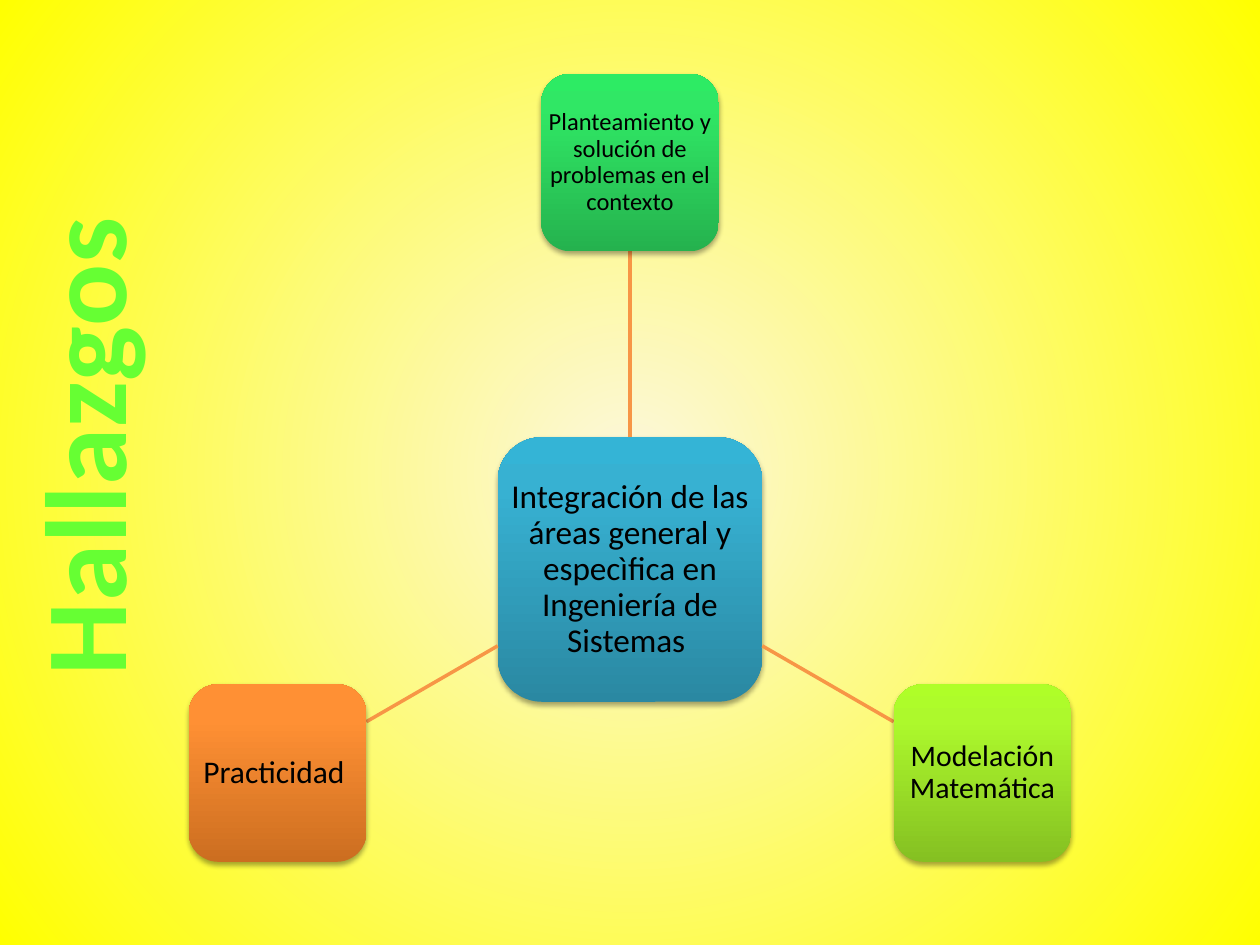
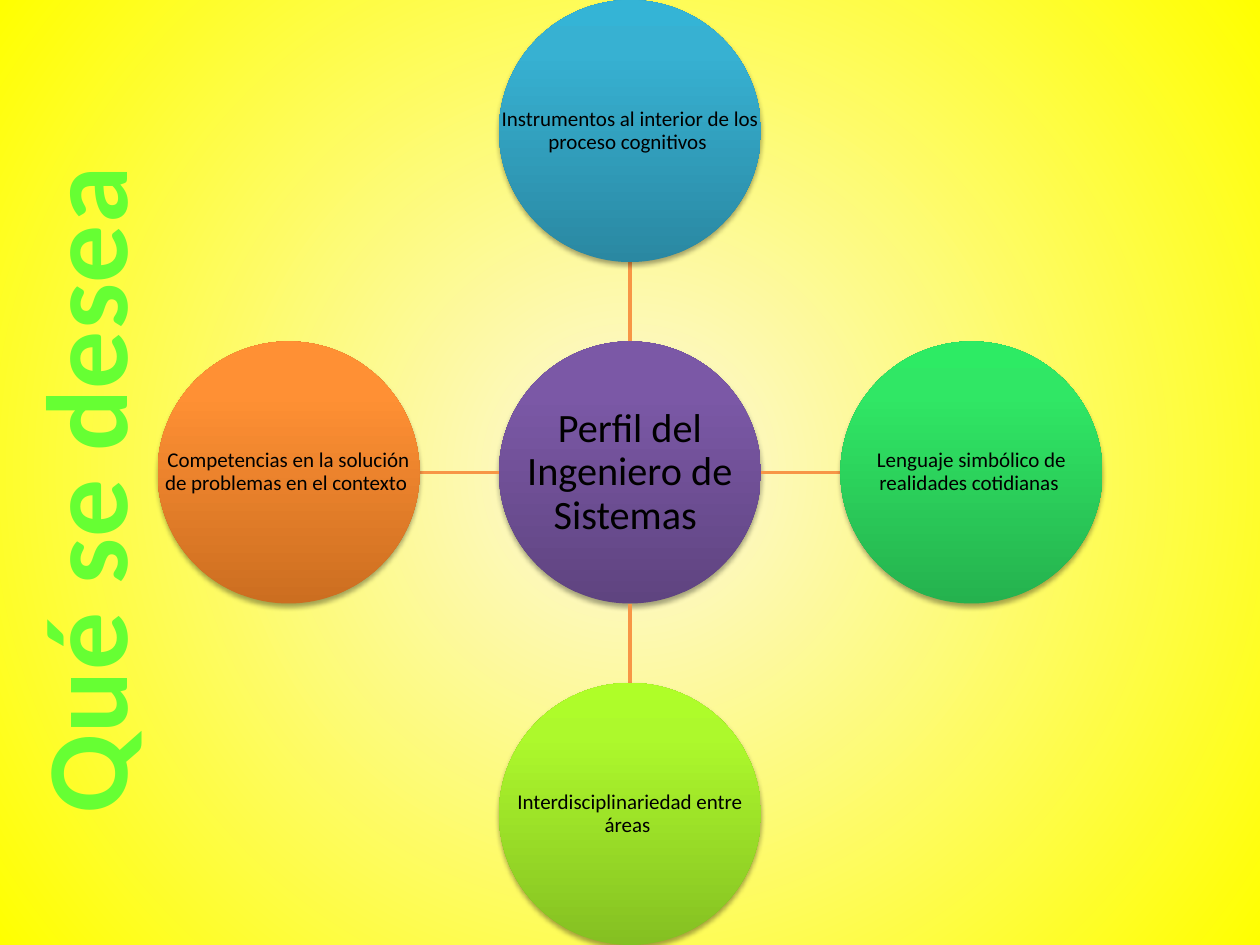
from math import cos, radians, sin
from lxml.etree import SubElement
from pptx import Presentation
from pptx.dml.color import RGBColor
from pptx.enum.shapes import MSO_CONNECTOR, MSO_SHAPE
from pptx.enum.text import MSO_ANCHOR, MSO_AUTO_SIZE, PP_ALIGN
from pptx.oxml import parse_xml
from pptx.oxml.ns import nsdecls, qn
from pptx.util import Inches, Pt

FONT = "Calibri"
BLACK = RGBColor(0x00, 0x00, 0x00)
LIME = RGBColor(0x66, 0xFF, 0x33)
AMBER = RGBColor(0xF7, 0x96, 0x46)
CREAM = RGBColor(0xFC, 0xF7, 0xDD)
YELLOW = RGBColor(0xFF, 0xFF, 0x00)
BLUE = [RGBColor(0x2A, 0x88, 0xA2), RGBColor(0x37, 0xB1, 0xD2), RGBColor(0x34, 0xB4, 0xD6)]
GREEN = [RGBColor(0x25, 0xB2, 0x4E), RGBColor(0x30, 0xE7, 0x65), RGBColor(0x2D, 0xEB, 0x64)]
GRASS = [RGBColor(0x85, 0xC0, 0x22), RGBColor(0xAD, 0xF9, 0x2C), RGBColor(0xAF, 0xFE, 0x28)]
ORANGE = [RGBColor(0xCC, 0x6E, 0x20), RGBColor(0xFF, 0x90, 0x34), RGBColor(0xFF, 0x91, 0x36)]
PURPLE = [RGBColor(0x5F, 0x44, 0x80), RGBColor(0x7B, 0x58, 0xA6), RGBColor(0x7C, 0x57, 0xA8)]

UPWARD = '<a:lin ang="16200000" scaled="0"/>'
RADIAL = '<a:path path="circle"><a:fillToRect l="50000" t="50000" r="50000" b="50000"/></a:path>'
SHADOW = (
    f'<a:outerShdw {nsdecls("a")} blurRad="{Pt(3.1)}" dist="{Pt(1.8)}" dir="5400000" '
    f'rotWithShape="0"><a:srgbClr val="{BLACK}"><a:alpha val="35000"/></a:srgbClr></a:outerShdw>'
)

SLIDES = [
    dict(
        title="Hallazgos ", place=(-1.64, 2.83, 4.57, 1.21),
        form=MSO_SHAPE.ROUNDED_RECTANGLE, mid=4.52, reach=3.23, core=2.1, size=1.41,
        hub=("Integración de las áreas general y especìfica en Ingeniería de Sistemas ", 19, 0.05, BLUE),
        nodes=[
            (-90, "Planteamiento y solución de problemas en el contexto", 14, 0.04, GREEN),
            (30, "Modelación Matemática", 17, 0.05, GRASS),
            (150, "Practicidad ", 18, 0.05, ORANGE),
        ],
    ),
    dict(
        title="Qué se desea ", place=(-2.54, 3.18, 6.38, 1.21),
        form=MSO_SHAPE.OVAL, mid=3.75, reach=2.71, core=2.08, size=2.08,
        hub=("Perfil del Ingeniero de Sistemas ", 23, 0.02, PURPLE),
        nodes=[
            (-90, "Instrumentos al interior de los proceso cognitivos ", 12, 0.01, BLUE),
            (0, "Lenguaje simbólico de realidades cotidianas ", 12, 0.01, GREEN),
            (90, "Interdisciplinariedad entre áreas ", 12, 0.01, GRASS),
            (180, "Competencias en la solución de problemas en el contexto ", 12, 0.01, ORANGE),
        ],
    ),
]


def shade(item, stops, course):
    item.fill.solid()
    marks = "".join(
        f'<a:gs pos="{pos * 1000}"><a:srgbClr val="{tone}"/></a:gs>' for pos, tone in stops
    )
    blend = parse_xml(
        f'<a:gradFill {nsdecls("a")} rotWithShape="1"><a:gsLst>{marks}</a:gsLst>{course}</a:gradFill>'
    )
    solid = next(item._element.iter(qn("a:solidFill")))
    solid.getparent().replace(solid, blend)


def add_node(slide, form, x, y, size, text, points, inset, tones):
    box = [Inches(v) for v in (x - size / 2, y - size / 2, size, size)]
    shape = slide.shapes.add_shape(form, *box)
    shade(shape, zip((0, 80, 100), tones), UPWARD)
    shape.line.fill.background()
    shape.shadow.inherit = False
    shape._element.spPr.find(qn("a:effectLst")).append(parse_xml(SHADOW))
    frame = slide.shapes.add_textbox(*box).text_frame
    frame.word_wrap = True
    frame.vertical_anchor = MSO_ANCHOR.MIDDLE
    frame.margin_left = frame.margin_right = Inches(inset)
    frame.margin_top = frame.margin_bottom = Inches(inset)
    frame.text = text
    line = frame.paragraphs[0]
    line.alignment = PP_ALIGN.CENTER
    line.line_spacing = 0.9
    font = line.runs[0].font
    font.name, font.size, font.color.rgb = FONT, Pt(points), BLACK


deck = Presentation()
deck.slide_width, deck.slide_height = Inches(10), Inches(7.5)

for plan in SLIDES:
    slide = deck.slides.add_slide(deck.slide_layouts[6])
    shade(slide.background, [(0, CREAM), (100, YELLOW)], RADIAL)
    form, mid = plan["form"], plan["mid"]
    add_node(slide, form, 5, mid, plan["core"], *plan["hub"])

    for angle, *look in plan["nodes"]:
        dx, dy = cos(radians(angle)), sin(radians(angle))
        edge = 1 if form == MSO_SHAPE.OVAL else 1 / max(abs(dx), abs(dy))
        near = plan["core"] / 2 * edge
        far = plan["reach"] - plan["size"] / 2 * edge
        ends = [Inches(v) for r in (near, far) for v in (5 + r * dx, mid + r * dy)]
        spoke = slide.shapes.add_connector(MSO_CONNECTOR.STRAIGHT, *ends)
        spoke.line.color.rgb = AMBER
        spoke.line.width = Pt(2)
        SubElement(spoke._element.spPr, qn("a:effectLst"))
        x, y = 5 + plan["reach"] * dx, mid + plan["reach"] * dy
        add_node(slide, form, x, y, plan["size"], *look)

    title = slide.shapes.add_textbox(*[Inches(v) for v in plan["place"]])
    title.rotation = 270
    frame = title.text_frame
    frame.word_wrap = False
    frame.auto_size = MSO_AUTO_SIZE.SHAPE_TO_FIT_TEXT
    frame.text = plan["title"]
    frame.paragraphs[0].alignment = PP_ALIGN.CENTER
    run = frame.paragraphs[0].runs[0]
    run.font.name, run.font.size, run.font.bold = FONT, Pt(66), True
    run.font.color.rgb = LIME
    run._r.get_or_add_rPr().set("spc", "50")

deck.save("out.pptx")
